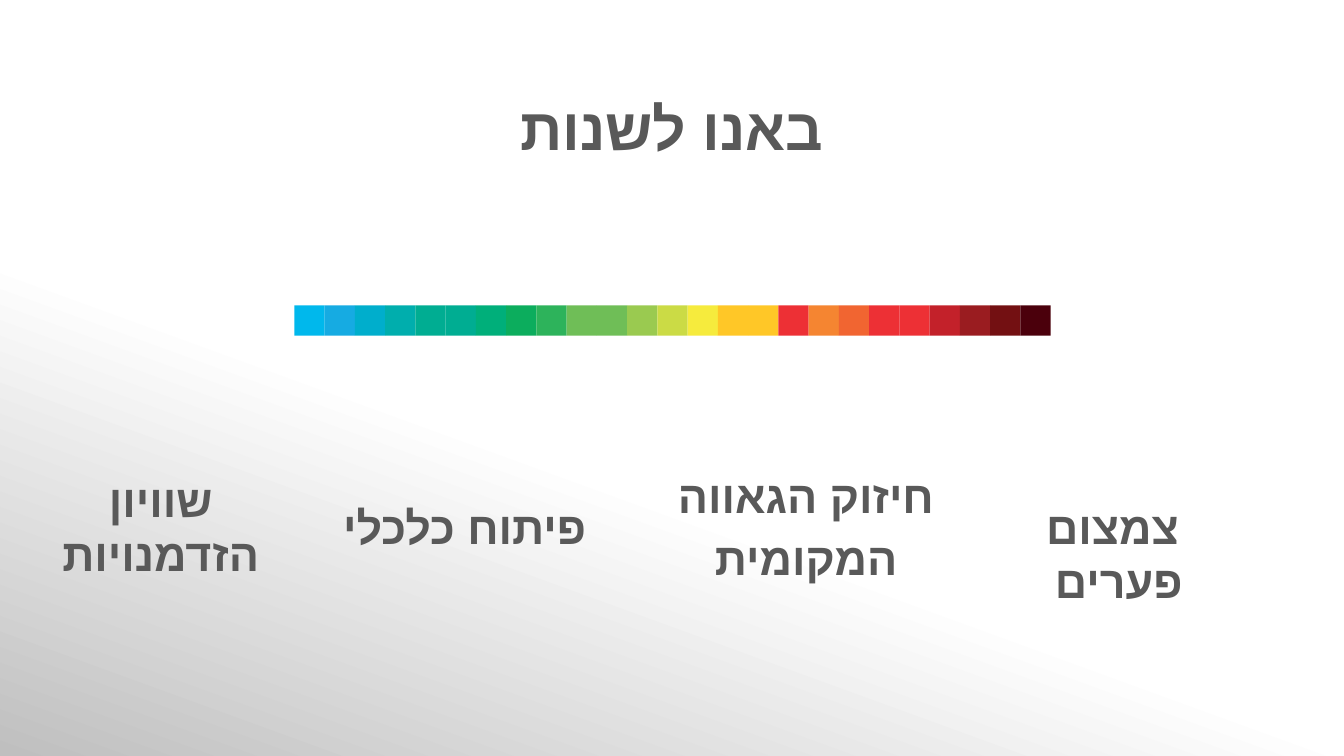
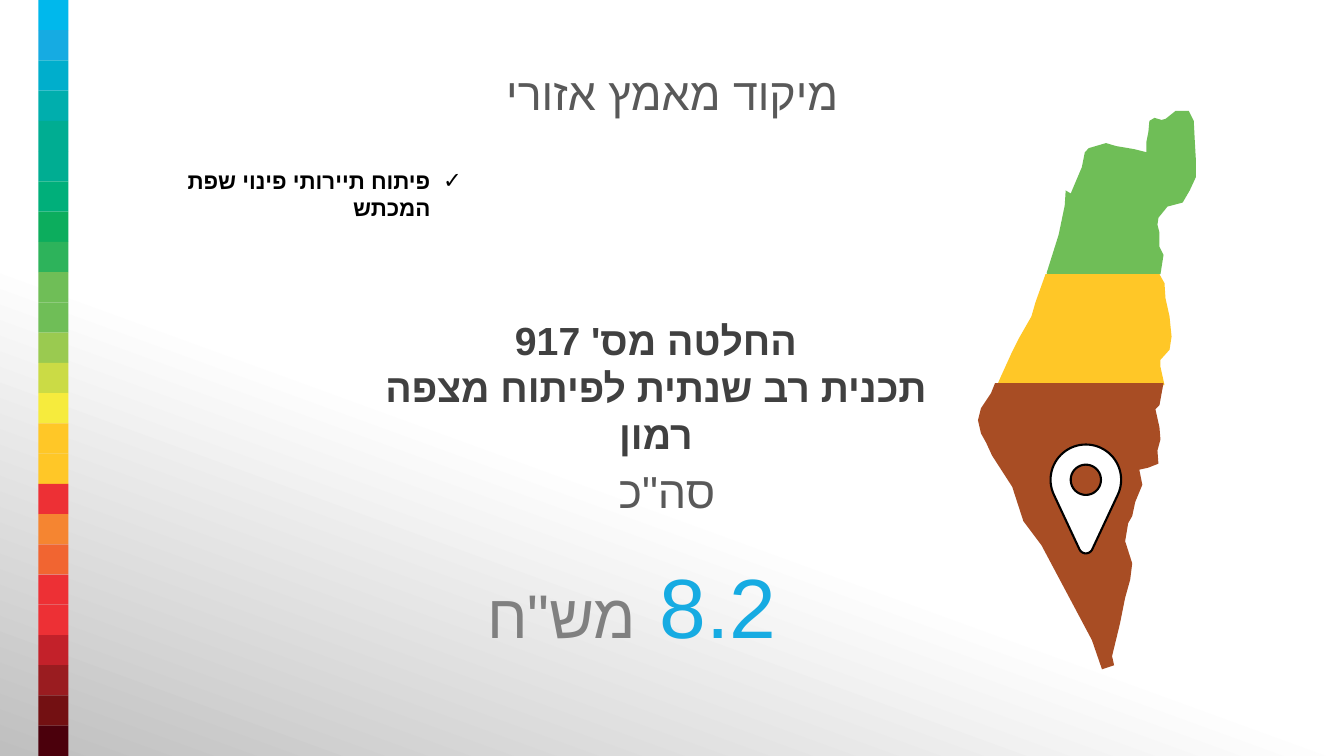
"""Build two Hebrew slides on regional development with a shared colour strip."""
from dataclasses import dataclass
from math import cos, radians, sin

from lxml.etree import SubElement as Sub
from pptx import Presentation
from pptx.dml.color import RGBColor as Rgb
from pptx.enum.shapes import MSO_SHAPE as Kind
from pptx.enum.text import MSO_ANCHOR as Anchor, MSO_AUTO_SIZE as Fit, PP_ALIGN as Align
from pptx.oxml.ns import qn
from pptx.util import Inches, Pt


@dataclass(frozen=True)
class Theme:
    face: str = "Roboto"
    plain: str = "Arial"
    white: str = "FFFFFF"
    black: str = "000000"
    shade: str = "BFBFBF"
    text: str = "595959"
    dark: str = "404040"
    gray: str = "808080"
    blue: str = "16ABE2"
    green: str = "6FBE57"
    gold: str = "FFC727"
    brown: str = "A84D24"
    title: int = 42
    head: int = 32
    plan: int = 28
    item: int = 16
    sum: int = 60
    unit: int = 44
    strip: tuple = (
        "00B8EC", "16ABE2", "00AECC", "00AEAD", "00AD92", "00AD92", "00AF7A",
        "0CAD5D", "2DB35B", "6FBE57", "6FBE57", "9ACA50", "CBDB45", "F6EB3D",
        "FFC727", "FFC727", "ED3035", "F58531", "F16531", "ED3035", "ED3035",
        "C3212A", "9A1C20", "731012", "4B000C")


theme = Theme()


def write(box, area, runs, bold=False, face=theme.face, mid=False, wrap=True, mark=None):
    box.left, box.top, box.width, box.height = map(Inches, area)
    frame = box.text_frame
    frame.word_wrap = wrap
    frame.auto_size = Fit.NONE
    frame.vertical_anchor = Anchor.MIDDLE if mid else Anchor.TOP
    frame.text = runs[0][0]
    for words, size, color in runs[1:]:
        frame.paragraphs[-1].add_run().text = words
    for row, para in enumerate(frame.paragraphs):
        para.alignment = Align.RIGHT if mark else Align.CENTER
        para.space_before = Pt(0.2 * runs[0][1] if row and mid else 0)
        props = para._p.get_or_add_pPr()
        props.set("rtl", "1")
        inset = Inches(0.31) if mark else 0
        props.set("marL", str(inset))
        props.set("indent", str(-inset))
        if mark:
            Sub(props, qn("a:buFont"), typeface=theme.plain)
            Sub(props, qn("a:buChar"), char=mark)
        else:
            Sub(props, qn("a:buNone"))
        for run, (words, size, color) in zip(para.runs, runs):
            run.font.size = Pt(size)
            run.font.bold = bold
            run.font.color.rgb = Rgb.from_string(color)
            run.font.name = face
            Sub(run._r.get_or_add_rPr(), qn("a:cs"), typeface=theme.plain)


def trace(slide, loops, color):
    first, *rest = [[(Inches(x), Inches(y)) for x, y in loop] for loop in loops]
    pen = slide.shapes.build_freeform(*first[0])
    pen.add_line_segments(first[1:], close=True)
    for loop in rest:
        pen.move_to(*loop[0])
        pen.add_line_segments(loop[1:], close=True)
    shape = pen.convert_to_shape()
    shape.shadow.inherit = False
    shape.fill.solid()
    shape.fill.fore_color.rgb = Rgb.from_string(color)
    shape.line.fill.background()
    return shape


deck = Presentation()
deck.slide_width, deck.slide_height = Inches(13.33), Inches(7.5)
back = deck.slide_master.background.fill
back.gradient()
back.gradient_angle = 250
for stop, place, color in zip(back.gradient_stops, (0.6, 1), (theme.white, theme.shade)):
    stop.position = place
    stop.color.rgb = Rgb.from_string(color)

goals, focus = [deck.slides.add_slide(deck.slide_layouts[1]) for _ in range(2)]

side = 0.3
for slide, left, top, across, down in ((goals, 2.92, 3.03, side, 0), (focus, 0.38, 0, 0, side)):
    for step, color in enumerate(theme.strip):
        tile = slide.shapes.add_shape(
            Kind.RECTANGLE, Inches(left + step * across), Inches(top + step * down),
            Inches(side), Inches(side))
        tile.shadow.inherit = False
        tile.fill.solid()
        tile.fill.fore_color.rgb = Rgb.from_string(color)
        tile.line.fill.background()

write(goals.shapes.title, (1.09, 0.8, 11.15, 0.91),
      [("באנו לשנות", theme.title, theme.text)], bold=True, mid=True)
for words, left, width, mid in (
        ("שוויון הזדמנויות", 0.46, 2.27, True),
        ("פיתוח כלכלי", 3.26, 2.7, True),
        ("חיזוק הגאווה\nהמקומית", 6.48, 3.03, True),
        ("צמצום פערים ", 9.67, 2.73, False)):
    box = goals.placeholders[1] if left < 1 else goals.shapes.add_textbox(0, 0, 0, 0)
    write(box, (left, 4.91, width, 0.63), [(words, theme.head, theme.text)], bold=True, mid=mid)

write(focus.shapes.title, (4.68, 0.6, 3.98, 0.64),
      [("מיקוד מאמץ אזורי", theme.head, theme.text)], wrap=False)
write(focus.placeholders[1], (1, 1.61, 3.68, 0.37),
      [("פיתוח תיירותי פינוי שפת המכתש", theme.item, theme.black)],
      bold=True, face=theme.plain, mark="✓")
write(focus.shapes.add_textbox(0, 0, 0, 0), (3.49, 3.09, 6.03, 1.04),
      [("החלטה מס' 917\nתכנית רב שנתית לפיתוח מצפה רמון", theme.plan, theme.dark)],
      bold=True, face=theme.plain)
write(focus.shapes.add_textbox(0, 0, 0, 0), (5.99, 4.55, 1.25, 0.64),
      [('סה"כ', theme.head, theme.text)], wrap=False)
write(focus.shapes.add_textbox(0, 0, 0, 0), (4.77, 5.45, 2.99, 1.11),
      [("8.2 ", theme.sum, theme.blue), ('מש"ח', theme.unit, theme.gray)], wrap=False)

north = (
    (11.79, 1.1), (11.66, 1.1), (11.56, 1.18), (11.52, 1.19), (11.45, 1.17), (11.4, 1.2),
    (11.39, 1.31), (11.37, 1.41), (11.37, 1.51), (11.25, 1.48), (11.07, 1.45), (10.97, 1.42),
    (10.8, 1.47), (10.76, 1.51), (10.73, 1.66), (10.62, 1.92), (10.57, 1.89), (10.56, 2.04),
    (10.5, 2.33), (10.38, 2.71), (10.4, 2.73), (11.51, 2.72), (11.54, 2.53), (11.5, 2.45),
    (11.5, 2.31), (11.48, 2.23), (11.49, 2.16), (11.58, 2.05), (11.73, 2.01), (11.8, 1.89),
    (11.86, 1.76), (11.86, 1.57), (11.85, 1.39), (11.84, 1.2))
middle = (
    (9.89, 3.82), (11.55, 3.82), (11.51, 3.64), (11.51, 3.57), (11.6, 3.47), (11.62, 3.34),
    (11.6, 3.14), (11.56, 2.96), (11.55, 2.81), (11.5, 2.72), (10.37, 2.72), (10.27, 3),
    (10.23, 3.14), (10.11, 3.35), (10.03, 3.51), (9.93, 3.73))
south = (
    (11.05, 6.6), (10.93, 6.64), (10.83, 6.35), (10.33, 5.41), (10.15, 5.17), (10.04, 4.83),
    (9.84, 4.52), (9.78, 4.39), (9.73, 4.3), (9.7, 4.17), (9.73, 4.05), (9.83, 3.9),
    (9.87, 3.8), (11.54, 3.8), (11.5, 4.02), (11.46, 4.06), (11.5, 4.24), (11.51, 4.36),
    (11.48, 4.47), (11.49, 4.6), (11.39, 4.64), (11.3, 4.66), (11.33, 4.81), (11.26, 4.98),
    (11.23, 5.12), (11.19, 5.19), (11.16, 5.37), (11.23, 5.59), (11.21, 5.75), (11.16, 5.93),
    (11.11, 6.18), (11.03, 6.51))
for land, color in ((north, theme.green), (middle, theme.gold), (south, theme.brown)):
    trace(focus, [land], color)

head, tip, hole = [
    [(10.77 + size * cos(radians(turn)), y + size * sin(radians(turn))) for turn in turns]
    for y, size, turns in ((4.76, 0.35, range(155, 386, 5)),
                           (5.42, 0.07, range(25, 156, 10)),
                           (4.76, 0.15, range(360, 0, -6)))]
pin = trace(focus, [head + tip, hole], theme.white)
pin.line.color.rgb = Rgb.from_string(theme.black)
pin.line.width = Pt(1.5)

deck.save("out.pptx")
